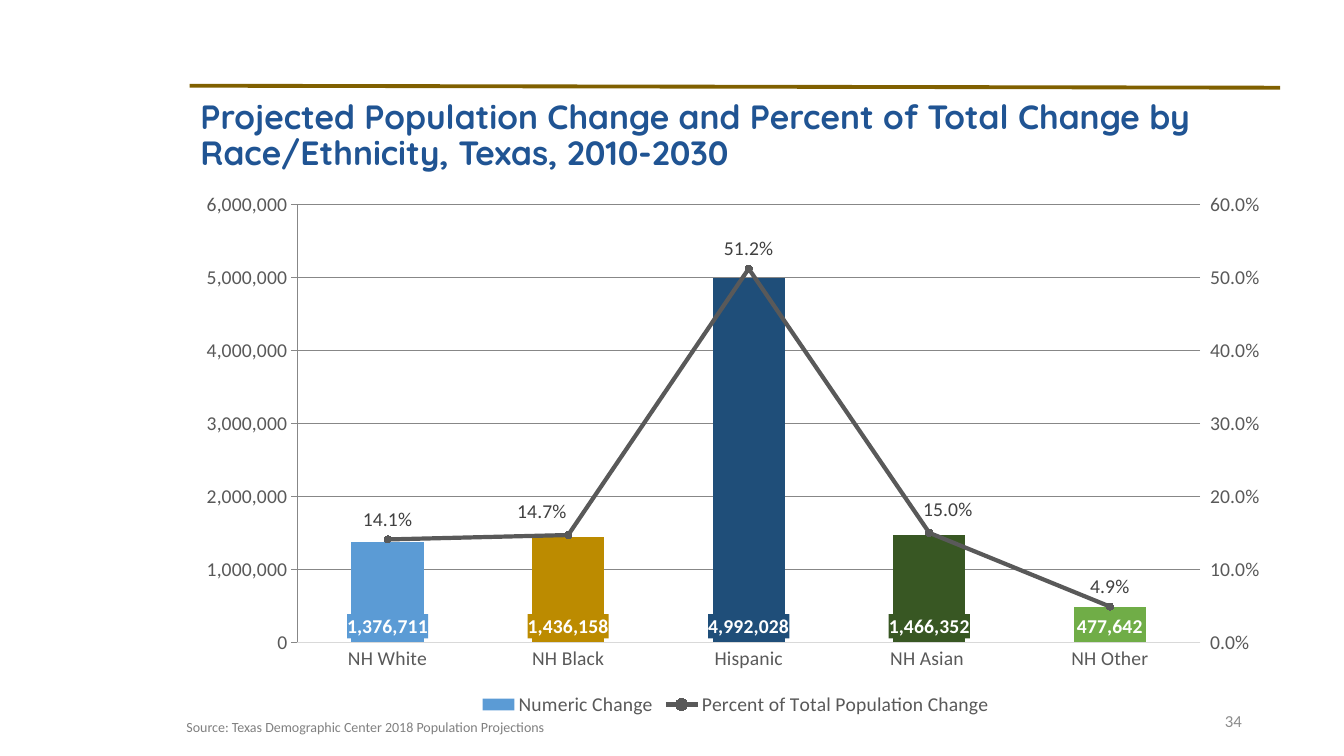
from copy import deepcopy

from lxml import etree
from pptx import Presentation
from pptx.chart.axis import CategoryAxis, ValueAxis
from pptx.chart.data import CategoryChartData
from pptx.dml.color import RGBColor
from pptx.enum.chart import (XL_CHART_TYPE, XL_LABEL_POSITION, XL_LEGEND_POSITION,
                             XL_MARKER_STYLE, XL_TICK_MARK)
from pptx.enum.shapes import MSO_CONNECTOR
from pptx.enum.text import MSO_ANCHOR, PP_ALIGN
from pptx.oxml import parse_xml
from pptx.oxml.ns import nsdecls, qn
from pptx.util import Cm, Pt

COLUMNS = XL_CHART_TYPE.COLUMN_CLUSTERED
INSIDE_BASE, ABOVE = XL_LABEL_POSITION.INSIDE_BASE, XL_LABEL_POSITION.ABOVE
BOTTOM = XL_LEGEND_POSITION.BOTTOM
CIRCLE = XL_MARKER_STYLE.CIRCLE
NO_TICK, TICK_OUT = XL_TICK_MARK.NONE, XL_TICK_MARK.OUTSIDE
STRAIGHT = MSO_CONNECTOR.STRAIGHT
TOP, MIDDLE = MSO_ANCHOR.TOP, MSO_ANCHOR.MIDDLE
LEFT, RIGHT = PP_ALIGN.LEFT, PP_ALIGN.RIGHT

COLORS = {
    "rule": "806000", "title": "205493", "page": "8C8C8C", "source": "808080",
    "axis": "595959", "grid": "D9D9D9", "percent": "595959",
    "percent_label": "404040", "change_label": "FFFFFF",
}
GROUPS = [  # name, numeric change, share of total change, column colour
    ("NH White", 1376711, 0.141, "5B9BD5"),
    ("NH Black", 1436158, 0.147, "BC8B00"),
    ("Hispanic", 4992028, 0.512, "1F4E79"),
    ("NH Asian ", 1466352, 0.15, "385723"),
    ("NH Other", 477642, 0.049, "70AD47"),
]
PERCENT_LABEL_SHIFTS = {1: (-0.024, -0.007), 3: (0.017, -0.007)}
CHANGE_FORMAT, PERCENT_FORMAT = "#,##0", "0.0%"


def rgb(name):
    return RGBColor.from_string(COLORS[name])


def style_font(font, color, size=14, bold=False, name="Calibri"):
    values = {"name": name, "size": Pt(size), "bold": bold}
    for attribute, value in values.items():
        setattr(font, attribute, value)
    font.color.rgb = rgb(color)


def add_text(slide, box, text, font, align=LEFT, anchor=TOP, line_spacing=1.0):
    frame = slide.shapes.add_textbox(*map(Cm, box)).text_frame
    frame.word_wrap = True
    frame.vertical_anchor = anchor
    paragraph = frame.paragraphs[0]
    paragraph.alignment = align
    paragraph.line_spacing = line_spacing
    run = paragraph.add_run()
    run.text = text
    style_font(run.font, **font)


def add_rule(slide, start, end):
    rule = slide.shapes.add_connector(STRAIGHT, *map(Cm, start + end))
    rule.line.color.rgb = rgb("rule")
    rule.line.width = Pt(2.75)
    etree.SubElement(rule._element.spPr, qn("a:effectLst"))


def move_percent_to_right_axis(plot_area):
    """Turn the second column series into a line with its own pair of axes."""
    columns = plot_area.find(qn("c:barChart"))
    percent = columns.findall(qn("c:ser"))[1]
    for column_only in percent.findall(qn("c:invertIfNegative")):
        percent.remove(column_only)
    lines = parse_xml(
        f'<c:lineChart {nsdecls("c")}><c:grouping val="standard"/>'
        '<c:varyColors val="0"/><c:marker val="1"/>'
        '<c:axId val="5001"/><c:axId val="5002"/></c:lineChart>')
    lines.insert(2, percent)
    columns.addnext(lines)

    left = plot_area.find(qn("c:valAx"))
    right = deepcopy(left)
    hidden = deepcopy(plot_area.find(qn("c:catAx")))
    left.addnext(right)
    right.addnext(hidden)
    for axis, own, other in ((hidden, "5001", "5002"), (right, "5002", "5001")):
        axis.find(qn("c:axId")).set("val", own)
        axis.find(qn("c:crossAx")).set("val", other)
    right.find(qn("c:axPos")).set("val", "r")
    right.find(qn("c:crosses")).set("val", "max")
    CategoryAxis(hidden).visible = False
    return ValueAxis(right)


def manual_layout(**values):
    items = "".join(f'<c:{key} val="{value}"/>' for key, value in values.items())
    return parse_xml(f'<c:layout {nsdecls("c")}><c:manualLayout>{items}'
                     '</c:manualLayout></c:layout>')


def style_value_axis(axis, maximum, step, number_format, tick):
    values = {"minimum_scale": 0, "maximum_scale": maximum, "major_unit": step,
              "major_tick_mark": tick, "minor_tick_mark": NO_TICK}
    for attribute, value in values.items():
        setattr(axis, attribute, value)
    axis.format.line.fill.background()
    axis.tick_labels.number_format = number_format
    axis.tick_labels.number_format_is_linked = False
    style_font(axis.tick_labels.font, "axis")


def style_labels(series, position, number_format, color, bold=False):
    labels = series.data_labels
    values = {"show_value": True, "position": position,
              "number_format": number_format, "number_format_is_linked": False}
    for attribute, value in values.items():
        setattr(labels, attribute, value)
    style_font(labels.font, color, bold=bold)


def point_label(series, index, position, color, bold=False):
    """Give one point its own label and return the label's element."""
    label = series.points[index].data_label
    style_font(label.font, color, bold=bold)
    label.position = position
    return series._element.xpath(f'.//c:dLbl[c:idx/@val="{index}"]')[0]


def style_change(series):
    style_labels(series, INSIDE_BASE, CHANGE_FORMAT, "change_label", True)
    series.format.fill.solid()
    series.format.fill.fore_color.rgb = RGBColor.from_string(GROUPS[0][3])
    for index, (_, _, _, color) in enumerate(GROUPS):
        fill = series.points[index].format.fill
        fill.solid()
        fill.fore_color.rgb = RGBColor.from_string(color)
        label = point_label(series, index, INSIDE_BASE, "change_label", True)
        for plain in label.findall(qn("c:spPr")):
            label.remove(plain)
        label.find(qn("c:txPr")).addprevious(parse_xml(
            f'<c:spPr {nsdecls("c", "a")}><a:solidFill><a:srgbClr val="{color}"/>'
            '</a:solidFill></c:spPr>'))


def style_percent(series):
    style_labels(series, ABOVE, PERCENT_FORMAT, "percent_label")
    series.smooth = False
    series.format.line.color.rgb = rgb("percent")
    series.format.line.width = Pt(3)
    marker = series.marker
    marker.style, marker.size = CIRCLE, 5
    marker.format.fill.solid()
    marker.format.fill.fore_color.rgb = rgb("percent")
    marker.format.line.color.rgb = rgb("percent")
    for index, (x, y) in PERCENT_LABEL_SHIFTS.items():
        label = point_label(series, index, ABOVE, "percent_label")
        label.insert(1, manual_layout(x=x, y=y))


def add_population_chart(slide, box):
    names, changes, shares, _ = zip(*GROUPS)
    data = CategoryChartData()
    data.categories = names
    data.add_series("Numeric Change", changes, CHANGE_FORMAT)
    data.add_series("Percent of Total Population Change", shares, PERCENT_FORMAT)
    chart = slide.shapes.add_chart(COLUMNS, *map(Cm, box), data).chart
    style_font(chart.font, "axis")
    chart.has_title = False
    chart.has_legend = True
    chart.legend.position = BOTTOM
    chart.legend.include_in_layout = False
    style_font(chart.legend.font, "axis")

    plot_area = chart._chartSpace.find(qn("c:chart")).find(qn("c:plotArea"))
    right_axis = move_percent_to_right_axis(plot_area)
    for layout in plot_area.findall(qn("c:layout")):
        plot_area.remove(layout)
    plot_area.insert(0, manual_layout(layoutTarget="inner", xMode="edge", yMode="edge",
                                      x=0.098, y=0.043, w=0.828, h=0.812))

    change_axis = chart.value_axis
    style_value_axis(change_axis, 6000000, 1000000, CHANGE_FORMAT, NO_TICK)
    style_value_axis(right_axis, 0.6, 0.1, PERCENT_FORMAT, TICK_OUT)
    right_axis.has_major_gridlines = False
    change_axis.has_major_gridlines = True
    group_axis = chart.category_axis
    group_axis.major_tick_mark = group_axis.minor_tick_mark = NO_TICK
    style_font(group_axis.tick_labels.font, "axis")
    for line in (change_axis.major_gridlines.format.line, group_axis.format.line):
        line.color.rgb = rgb("grid")
        line.width = Pt(0.75)

    columns, lines = chart.plots
    columns.gap_width = 150
    columns.vary_by_categories = False
    style_change(columns.series[0])
    style_percent(lines.series[0])


def main():
    deck = Presentation()
    deck.slide_width, deck.slide_height = Cm(33.87), Cm(19.05)
    slide = deck.slides.add_slide(deck.slide_layouts[6])
    add_rule(slide, (4.78, 2.16), (32.26, 2.21))
    add_text(slide, (4.8, 2.41, 27.48, 15.24),
             "Projected Population Change and Percent of Total Change by "
             "Race/Ethnicity, Texas, 2010-2030",
             {"color": "title", "size": 24, "bold": True, "name": "Quicksand"},
             line_spacing=0.9)
    add_text(slide, (23.93, 17.65, 7.62, 1.02), "34",
             {"color": "page", "size": 12}, align=RIGHT, anchor=MIDDLE)
    add_population_chart(slide, (4.8, 4.57, 27.48, 13.59))
    add_text(slide, (4.45, 17.98, 24.33, 0.69),
             "Source: Texas Demographic Center 2018 Population Projections",
             {"color": "source", "size": 10})
    deck.save("out.pptx")


if __name__ == "__main__":
    main()
